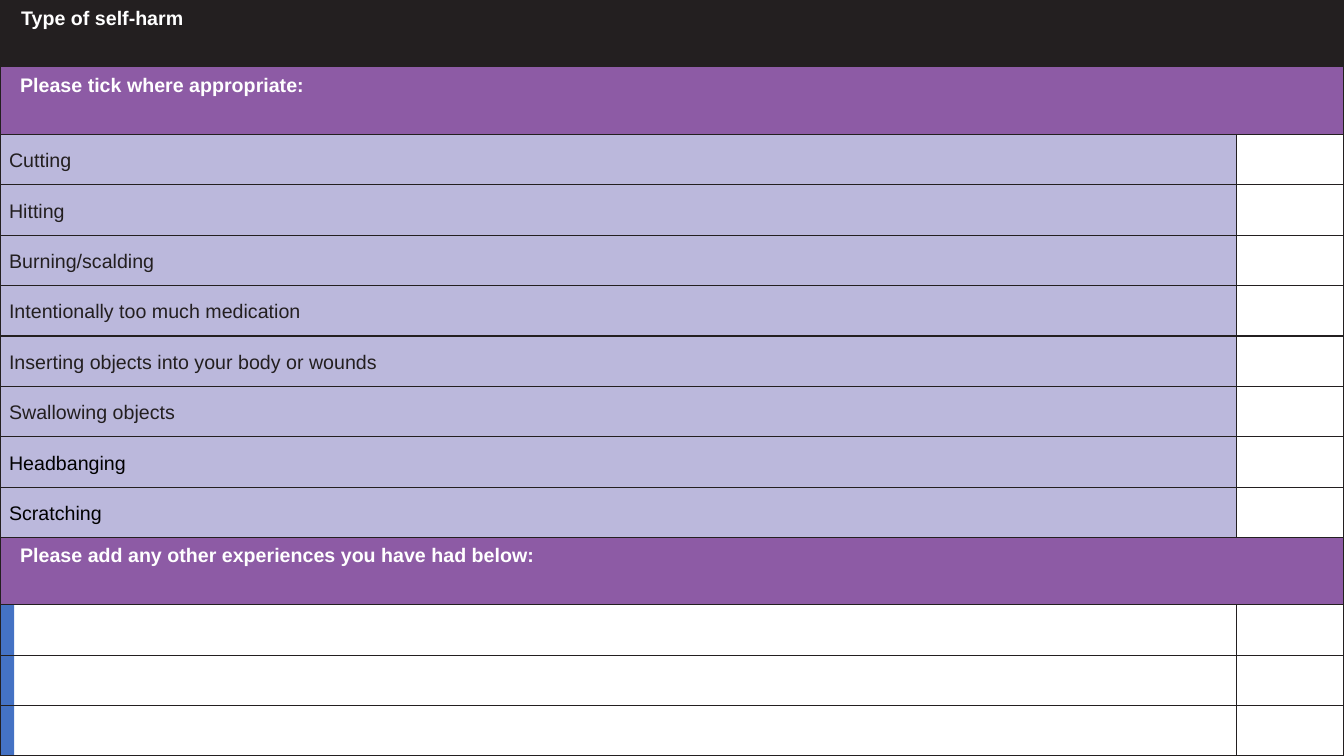
from lxml.etree import SubElement
from pptx import Presentation
from pptx.dml.color import RGBColor
from pptx.enum.shapes import MSO_SHAPE as Shape
from pptx.enum.text import MSO_ANCHOR as Anchor
from pptx.oxml.ns import qn
from pptx.util import Inches, Pt

WIDTH, HEIGHT = 13.33, 7.5
TICK_WIDTH = 1.07
ROW_HEIGHT = 0.5
BLANK_ROWS = 3
DARK, PURPLE, LILAC, BLUE = "231F20", "8D5BA5", "BBB8DC", "4472C4"
WHITE, BLACK = "FFFFFF", "000000"
NO_STYLE = "{2D5ABB26-0587-4C30-8999-92F81FD0307C}"
TITLE = "Type of self-harm"
TICK_HEADING = "Please tick where appropriate:"
OTHER_HEADING = "Please add any other experiences you have had below:"
EXPERIENCES = [
    ("Cutting", DARK),
    ("Hitting", DARK),
    ("Burning/scalding", DARK),
    ("Intentionally too much medication", DARK),
    ("Inserting objects into your body or wounds", DARK),
    ("Swallowing objects", DARK),
    ("Headbanging", BLACK),
    ("Scratching", BLACK),
]


def paint(fill, colour):
    fill.solid()
    fill.fore_color.rgb = RGBColor.from_string(colour)


def add_strip(page):
    strip = page.shapes.add_shape(Shape.RECTANGLE, 0, 0, Inches(0.14), Inches(HEIGHT))
    strip.shadow.inherit = False
    paint(strip.fill, BLUE)
    strip.line.fill.background()


def add_grid(page, row_count):
    frame = page.shapes.add_table(row_count, 2, 0, 0, Inches(WIDTH), Inches(HEIGHT))
    table = frame.table
    table.first_row = table.horz_banding = False
    table._tbl.tblPr.find(qn("a:tableStyleId")).text = NO_STYLE
    table.columns[0].width = Inches(WIDTH - TICK_WIDTH)
    table.columns[1].width = Inches(TICK_WIDTH)
    return table


def draw_borders(cell, sides):
    properties = cell._tc.get_or_add_tcPr()
    for side in sides:
        line = SubElement(properties, qn(f"a:ln{side}"), w=str(Pt(1)))
        fill = SubElement(line, qn("a:solidFill"))
        SubElement(fill, qn("a:srgbClr"), val=DARK)


def write(cell, text, colour, bold, margins, indent=0.08):
    cell.margin_left, cell.margin_top, cell.margin_right, cell.margin_bottom = map(Inches, margins)
    para = cell.text_frame.paragraphs[0]
    para.text = text
    para.line_spacing = 1.07
    para.space_before = Pt(4)
    para._p.get_or_add_pPr().set("marL", str(Inches(indent)))
    para.font.name = "Arial"
    para.font.size = Pt(14)
    para.font.bold = bold
    para.font.color.rgb = RGBColor.from_string(colour)


def fill_heading(row, text, colour, sides="LRTB", indent=0.08):
    label, covered = row.cells
    label.merge(covered)
    for cell in (label, covered):
        draw_borders(cell, sides)
    paint(label.fill, colour)
    write(label, text, WHITE, True, (0.12, 0.06, 0.12, 0.06), indent)


def fill_blank(row):
    row.height = Inches(ROW_HEIGHT)
    for cell in row.cells:
        draw_borders(cell, "LRTB")


def fill_experience(row, text, colour):
    fill_blank(row)
    label = row.cells[0]
    paint(label.fill, LILAC)
    label.vertical_anchor = Anchor.MIDDLE
    write(label, text, colour, False, (0.01, 0.01, 0.01, 0))


def main():
    deck = Presentation()
    deck.slide_width, deck.slide_height = Inches(WIDTH), Inches(HEIGHT)
    page = deck.slides.add_slide(deck.slide_layouts[6])
    add_strip(page)

    other_index = 2 + len(EXPERIENCES)
    headings = (0, 1, other_index)
    plain_rows = len(EXPERIENCES) + BLANK_ROWS
    heading_height = (HEIGHT - plain_rows * ROW_HEIGHT) / len(headings)
    table = add_grid(page, plain_rows + len(headings))
    rows = list(table.rows)
    for index in headings:
        rows[index].height = Inches(heading_height)

    fill_heading(rows[0], TITLE, DARK, "", 0.09)
    fill_heading(rows[1], TICK_HEADING, PURPLE, "LRB")
    for row, (text, colour) in zip(rows[2:other_index], EXPERIENCES):
        fill_experience(row, text, colour)
    fill_heading(rows[other_index], OTHER_HEADING, PURPLE)
    for row in rows[other_index + 1:]:
        fill_blank(row)

    deck.save("out.pptx")


if __name__ == "__main__":
    main()
